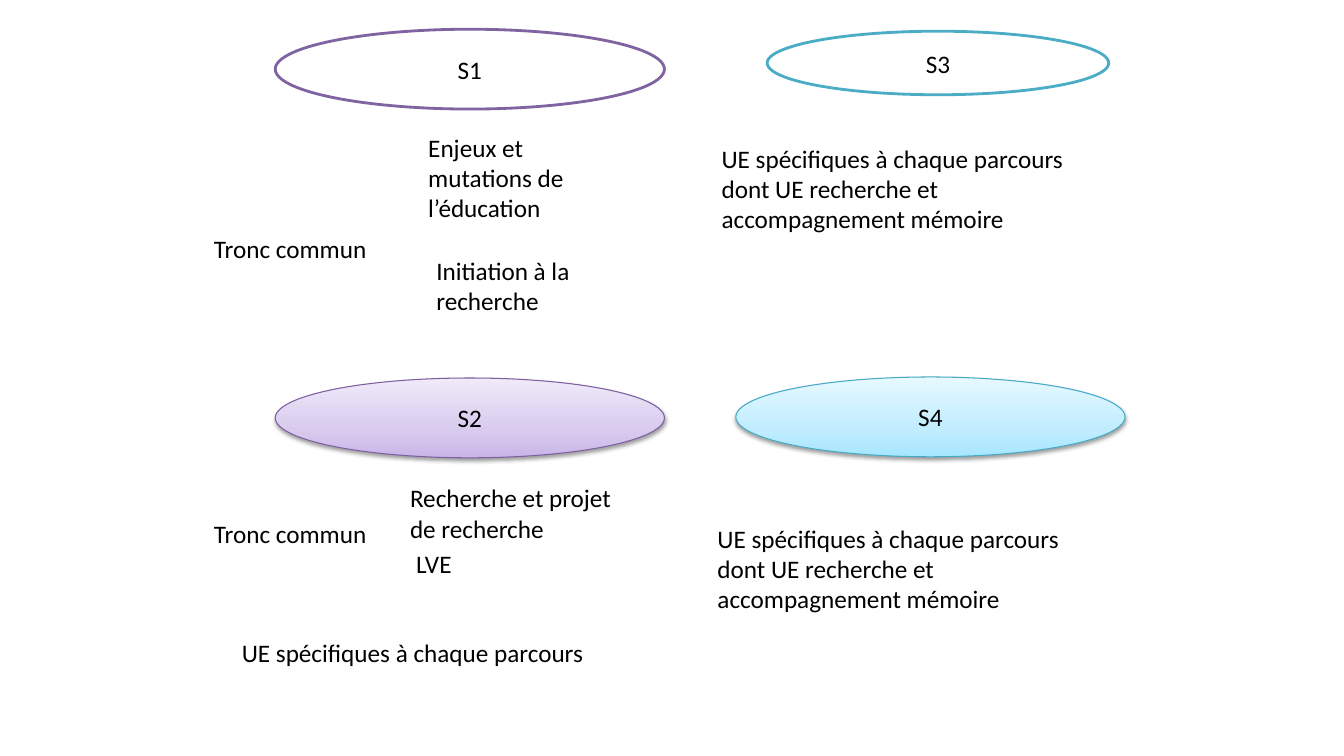
from lxml import etree
from pptx import Presentation
from pptx.dml.color import RGBColor
from pptx.enum.shapes import MSO_SHAPE
from pptx.enum.text import MSO_ANCHOR, MSO_AUTO_SIZE, PP_ALIGN
from pptx.oxml.ns import qn
from pptx.util import Pt

OVAL = MSO_SHAPE.OVAL
MIDDLE = MSO_ANCHOR.MIDDLE
GROW = MSO_AUTO_SIZE.SHAPE_TO_FIT_TEXT
LEFT, CENTER = PP_ALIGN.LEFT, PP_ALIGN.CENTER

COLORS = {
    "white": "FFFFFF", "black": "000000",
    "purple": "8064A2", "plum": "7D60A0",
    "teal": "4BACC6", "sea": "46AAC5",
}
SHADES = {
    "plum": ["C9B5E8", "D8CBEE", "F0EAF9"],
    "sea": ["A7E6FF", "C1EDFF", "E7F8FF"],
}
STOPS = [0, 35000, 100000]


def write(shape, text, align):
    par = shape.text_frame.paragraphs[0]
    par.alignment = align
    run = par.add_run()
    run.text = text
    run.font.name = "Calibri"
    run.font.size = Pt(18)
    run.font.color.rgb = RGBColor.from_string(COLORS["black"])


def add_color(parent, color):
    return etree.SubElement(parent, qn("a:srgbClr"), val=color)


prs = Presentation()
prs.slide_width, prs.slide_height = Pt(960), Pt(540)
slide = prs.slides.add_slide(prs.slide_layouts[6])

# Semesters: name, left, top, width, height, line colour, line width
semesters = [
    ("S1", 196.6, 20.9, 278, 57, "purple", 2),
    ("S2", 196.6, 270, 278, 57, "plum", 0.75),
    ("S3", 548, 22.3, 244, 45.4, "teal", 2),
    ("S4", 525.6, 269.3, 278, 57, "sea", 0.75),
]
for name, left, top, width, height, color, weight in semesters:
    oval = slide.shapes.add_shape(OVAL, Pt(left), Pt(top), Pt(width), Pt(height))
    oval.shadow.inherit = False
    oval.line.color.rgb = RGBColor.from_string(COLORS[color])
    oval.line.width = Pt(weight)
    oval.text_frame.vertical_anchor = MIDDLE
    write(oval, name, CENTER)

    if color not in SHADES:
        oval.fill.solid()
        oval.fill.fore_color.rgb = RGBColor.from_string(COLORS["white"])
        continue

    # Three-stop gradient, dark at the bottom
    oval.fill.gradient()
    oval.fill.gradient_angle = 90
    props = oval.element.spPr
    stops = props.find(".//" + qn("a:gsLst"))
    for old in list(stops):
        stops.remove(old)
    for pos, shade in zip(STOPS, SHADES[color]):
        add_color(etree.SubElement(stops, qn("a:gs"), pos=str(pos)), shade)

    # Soft shadow below
    shadow = etree.SubElement(
        props.find(qn("a:effectLst")), qn("a:outerShdw"),
        blurRad=str(Pt(3.1)), dist=str(Pt(1.6)), dir="5400000", rotWithShape="0")
    etree.SubElement(add_color(shadow, COLORS["black"]), qn("a:alpha"), val="38000")

# Course labels: text, left, top, width, height, alignment
core = "Tronc commun"
units = "UE spécifiques à chaque parcours"
thesis = units + " dont UE recherche et accompagnement mémoire"
labels = [
    (core, 125.3, 163.4, 164, 29, CENTER),
    ("Enjeux et mutations de l’éducation", 298.8, 90.7, 154, 72.7, LEFT),
    ("Initiation à la recherche", 304.6, 178.6, 123, 51, LEFT),
    (core, 125.3, 366.5, 164, 29, CENTER),
    ("Recherche et projet de recherche", 285.8, 341.3, 170, 51, LEFT),
    ("LVE", 290.2, 388, 170, 29, LEFT),
    (units, 165.6, 451.5, 295, 29, LEFT),
    (thesis, 508.3, 98.6, 295, 72.7, LEFT),
    (thesis, 505.4, 370, 295, 72.7, LEFT),
]
for text, left, top, width, height, align in labels:
    box = slide.shapes.add_textbox(Pt(left), Pt(top), Pt(width), Pt(height))
    box.text_frame.word_wrap = True
    box.text_frame.auto_size = GROW
    write(box, text, align)

prs.save("out.pptx")
